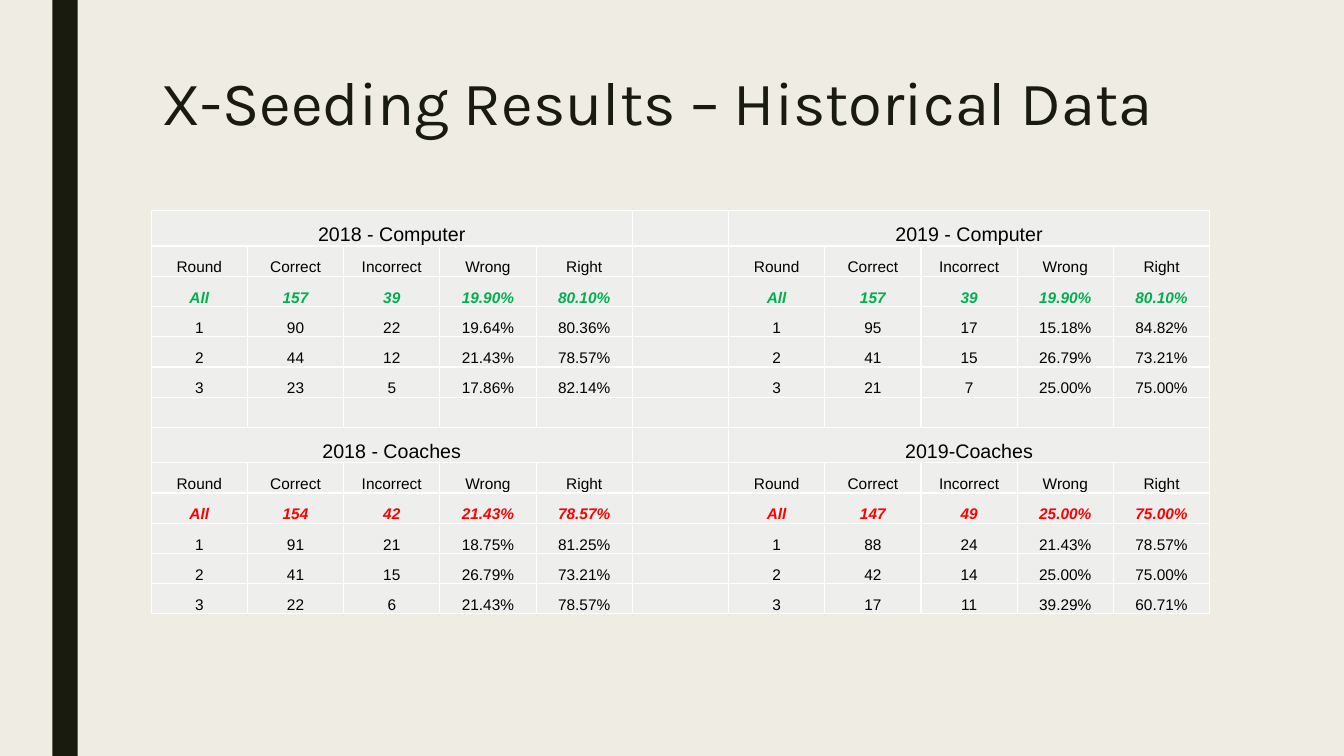
from lxml import etree
from pptx import Presentation
from pptx.dml.color import RGBColor
from pptx.enum.shapes import MSO_SHAPE
from pptx.enum.text import MSO_ANCHOR, PP_ALIGN
from pptx.oxml.ns import qn
from pptx.util import Inches, Pt

RECT = MSO_SHAPE.RECTANGLE
TOP, BOTTOM = MSO_ANCHOR.TOP, MSO_ANCHOR.BOTTOM
LEFT, CENTER = PP_ALIGN.LEFT, PP_ALIGN.CENTER

COLORS = {"back": "EFEDE3", "dark": "191B0E", "cell": "EEEEED", "border": "FFFFFF",
          "text": "000000", "green": "00B050", "red": "FF0000"}
HEADERS = ["Round", "Correct", "Incorrect", "Wrong", "Right"]
COLS, ROWS = 11, 13

# Heading, first row, first column, colour of the total, (correct, incorrect) by round
BLOCKS = [
    ("2018 - Computer", 0, 0, "green", [(90, 22), (44, 12), (23, 5)]),
    ("2019 - Computer", 0, 6, "green", [(95, 17), (41, 15), (21, 7)]),
    ("2018 - Coaches", 7, 0, "red", [(91, 21), (41, 15), (22, 6)]),
    ("2019-Coaches", 7, 6, "red", [(88, 24), (42, 14), (17, 11)]),
]


def result_row(label, correct, incorrect):
    total = correct + incorrect
    return [label, correct, incorrect, f"{incorrect / total:.2%}", f"{correct / total:.2%}"]


class Deck:
    def __init__(self):
        self.prs = Presentation()
        self.prs.slide_width, self.prs.slide_height = Inches(13.33), Inches(7.5)
        self.s = self.prs.slides.add_slide(self.prs.slide_layouts[5])
        self.fill(self.s.background.fill, "back")

    def fill(self, fill, color):
        fill.solid()
        fill.fore_color.rgb = RGBColor.from_string(COLORS[color])

    def font(self, p, name, size, color, strong=False):
        f = p.font
        f.name, f.size, f.bold, f.italic = name, Pt(size), strong, strong
        f.color.rgb = RGBColor.from_string(COLORS[color])

    def bar(self, x, y, w, h):
        sp = self.s.shapes.add_shape(RECT, Inches(x), Inches(y), Inches(w), Inches(h))
        sp.shadow.inherit = False
        self.fill(sp.fill, "dark")
        sp.line.fill.background()

    def title(self, text, x, y, w, h):
        sp = self.s.shapes.title
        sp.left, sp.top, sp.width, sp.height = Inches(x), Inches(y), Inches(w), Inches(h)
        tf = sp.text_frame
        tf.text, tf.word_wrap, tf.vertical_anchor = text, True, TOP
        p = tf.paragraphs[0]
        p.alignment, p.line_spacing = LEFT, 0.89
        self.font(p, "Karla", 44, "dark")

    def table(self, x, y, w, heights):
        tbl = self.s.shapes.add_table(len(heights), COLS, Inches(x), Inches(y),
                                      Inches(w), Inches(sum(heights))).table
        tbl.first_row = tbl.horz_banding = False
        for col in tbl.columns:
            col.width = Inches(w / COLS)
        for row, height in zip(tbl.rows, heights):
            row.height = Inches(height)
        for cell in tbl.iter_cells():
            self.style_cell(cell)
        return tbl

    def style_cell(self, cell):
        cell.margin_left = cell.margin_right = cell.margin_top = Inches(0.01)
        cell.margin_bottom = 0
        cell.vertical_anchor = BOTTOM
        # Empty cells keep a small line height
        cell.text_frame.paragraphs[0]._p.get_or_add_endParaRPr().set("sz", "1100")
        # Borders come before the fill
        tcPr = cell._tc.get_or_add_tcPr()
        for side in ("lnL", "lnR", "lnT", "lnB"):
            ln = etree.SubElement(tcPr, qn(f"a:{side}"), w=str(Pt(1)))
            solid = etree.SubElement(ln, qn("a:solidFill"))
            etree.SubElement(solid, qn("a:srgbClr"), val=COLORS["border"])
        self.fill(cell.fill, "cell")

    def cell_text(self, cell, text, size=11, color="text", strong=False):
        p = cell.text_frame.paragraphs[0]
        p.add_run().text = str(text)
        p.alignment = CENTER
        self.font(p, "Arial", size, color, strong)

    def block(self, tbl, heading, top, left, color, rounds):
        head = tbl.cell(top, left)
        head.merge(tbl.cell(top, left + len(HEADERS) - 1))
        self.cell_text(head, heading, size=14)
        totals = [sum(counts) for counts in zip(*rounds)]
        rows = [HEADERS, result_row("All", *totals)]
        rows += [result_row(n, *counts) for n, counts in enumerate(rounds, 1)]
        for i, row in enumerate(rows):
            is_total = i == 1
            for j, value in enumerate(row):
                self.cell_text(tbl.cell(top + 1 + i, left + j), value,
                               color=color if is_total else "text", strong=is_total)


def main():
    deck = Deck()

    # Side bar and title
    deck.bar(0.52, 0, 0.25, 7.5)
    deck.title("X-Seeding Results – Historical Data", 1.5, 0.67, 10.5, 1.62)

    # Results table: heading rows are taller
    heading_rows = {block[1] for block in BLOCKS}
    heights = [0.35 if i in heading_rows else 0.3 for i in range(ROWS)]
    tbl = deck.table(1.5, 2.09, 10.5, heights)
    for block in BLOCKS:
        deck.block(tbl, *block)

    deck.prs.save("out.pptx")


if __name__ == "__main__":
    main()
